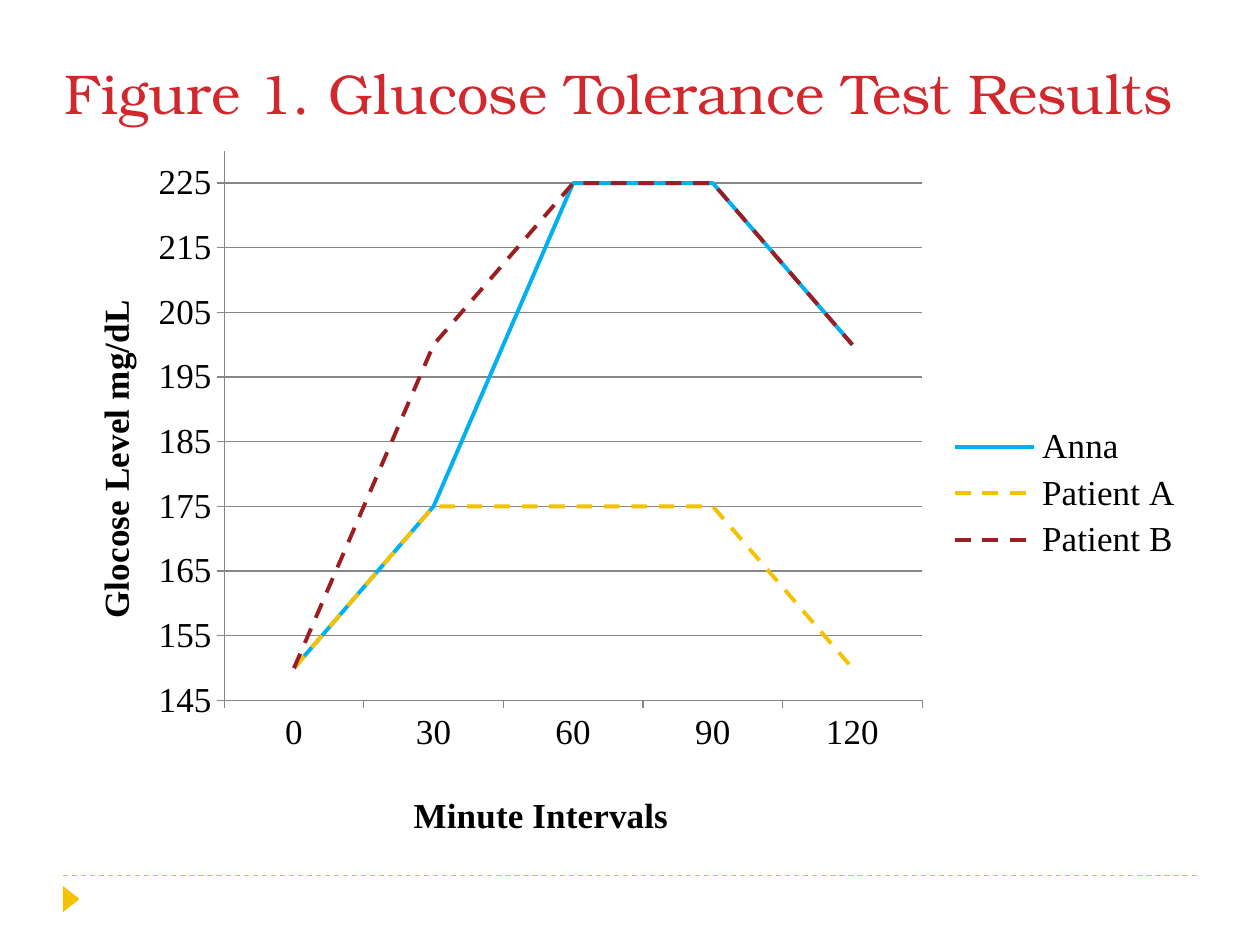
from lxml.etree import SubElement
from pptx import Presentation
from pptx.chart.data import CategoryChartData
from pptx.dml.color import RGBColor
from pptx.enum.chart import XL_CHART_TYPE, XL_LEGEND_POSITION, XL_TICK_MARK
from pptx.enum.dml import MSO_LINE
from pptx.enum.shapes import MSO_CONNECTOR, MSO_SHAPE
from pptx.enum.text import MSO_ANCHOR
from pptx.oxml import parse_xml
from pptx.oxml.ns import nsdecls, qn
from pptx.util import Pt

THEME = {
    "red": RGBColor(0xD1, 0x28, 0x2E),
    "gold": RGBColor(0xF5, 0xC2, 0x01),
    "blue": RGBColor(0x00, 0xB0, 0xF0),
    "maroon": RGBColor(0x9D, 0x1E, 0x22),
    "black": RGBColor(0, 0, 0),
    "grey": RGBColor(0x86, 0x86, 0x86),
    "title_font": "TeX Gyre Bonum",
    "chart_font": "Times New Roman",
    "title_size": Pt(32),
    "chart_size": Pt(20),
}

TITLE = "Figure 1. Glucose Tolerance Test Results"
MINUTES = ["0", "30", "60", "90", "120"]
SERIES = [  # name, glucose levels, colour, dash
    ("Anna", (150, 175, 225, 225, 200), "blue", MSO_LINE.SOLID),
    ("Patient A", (150, 175, 175, 175, 150), "gold", MSO_LINE.DASH),
    ("Patient B", (150, 200, 225, 225, 200), "maroon", MSO_LINE.DASH),
]
X_TITLE, Y_TITLE = "Minute Intervals", "Glocose Level mg/dL"
# Fractions of the chart area
PLOT_BOX = {"x": 0.15, "y": 0.02, "w": 0.61, "h": 0.77}
X_TITLE_SPOT = {"x": 0.31, "y": 0.91}
Y_TITLE_SPOT = {"x": 0.03, "y": 0.22}


def make_layout(box, inner=False):
    """Return a manual chart layout holding the given fractions."""
    layout = parse_xml(f"<c:layout {nsdecls('c')}><c:manualLayout/></c:layout>")
    values = {"layoutTarget": "inner"} if inner else {}
    values.update({"xMode": "edge", "yMode": "edge"}, **box)
    for tag, value in values.items():
        SubElement(layout[0], qn(f"c:{tag}")).set("val", str(value))
    return layout


def style_axis(axis, title, spot):
    axis.major_tick_mark = XL_TICK_MARK.OUTSIDE
    axis.minor_tick_mark = XL_TICK_MARK.NONE
    axis.format.line.color.rgb = THEME["grey"]
    axis.format.line.width = Pt(0.75)
    tf = axis.axis_title.text_frame
    tf.text = title
    font = tf.paragraphs[0].font
    font.name, font.size, font.bold = THEME["chart_font"], THEME["chart_size"], True
    font.color.rgb = THEME["black"]
    el = axis.axis_title._element
    for old in el.findall(qn("c:layout")):
        el.remove(old)
    el.find(qn("c:tx")).addnext(make_layout(spot))


def add_chart(slide):
    data = CategoryChartData()
    data.categories = MINUTES
    for name, levels, *_ in SERIES:
        data.add_series(name, levels)
    chart = slide.shapes.add_chart(
        XL_CHART_TYPE.LINE, Pt(30), Pt(78), Pt(654), Pt(408), data).chart
    chart.has_title = False
    chart.font.name, chart.font.size = THEME["chart_font"], THEME["chart_size"]
    chart.font.color.rgb = THEME["black"]
    chart.has_legend = True
    chart.legend.position = XL_LEGEND_POSITION.RIGHT
    chart.legend.include_in_layout = False

    plot = chart.plots[0]
    plot.vary_by_categories = False
    for series, (_, _, color, dash) in zip(plot.series, SERIES):
        series.smooth = False
        line = series.format.line
        line.color.rgb, line.width, line.dash_style = THEME[color], Pt(2.25), dash

    style_axis(chart.category_axis, X_TITLE, X_TITLE_SPOT)
    axis = chart.value_axis
    style_axis(axis, Y_TITLE, Y_TITLE_SPOT)
    body = axis.axis_title.text_frame._txBody.bodyPr
    body.set("rot", "-5400000")
    body.set("vert", "horz")
    axis.minimum_scale, axis.maximum_scale, axis.major_unit = 145, 230, 10
    axis.has_major_gridlines = True
    grid = axis.major_gridlines.format.line
    grid.color.rgb, grid.width = THEME["grey"], Pt(0.75)

    area = chart._chartSpace.chart.plotArea
    for old in area.findall(qn("c:layout")):
        area.remove(old)
    area.insert(0, make_layout(PLOT_BOX, inner=True))


def add_footer(slide):
    rule = slide.shapes.add_connector(
        MSO_CONNECTOR.STRAIGHT, Pt(36), Pt(500.4), Pt(684), Pt(500.4))
    rule.line.color.rgb, rule.line.width = THEME["gold"], Pt(0.75)
    rule.line.dash_style = MSO_LINE.DASH
    SubElement(rule._element.spPr, qn("a:effectLst"))
    marker = slide.shapes.add_shape(
        MSO_SHAPE.ISOSCELES_TRIANGLE, Pt(33.2), Pt(509), Pt(15), Pt(9.5))
    marker.rotation = 90
    marker.shadow.inherit = False
    marker.fill.solid()
    marker.fill.fore_color.rgb = THEME["gold"]
    marker.line.fill.background()


def add_title(slide):
    tf = slide.shapes.add_textbox(Pt(30), Pt(30), Pt(672), Pt(78)).text_frame
    tf.word_wrap = True
    tf.vertical_anchor = MSO_ANCHOR.TOP
    p = tf.paragraphs[0]
    p.text = TITLE
    p.font.name, p.font.size = THEME["title_font"], THEME["title_size"]
    p.font.color.rgb = THEME["red"]


def main():
    prs = Presentation()
    prs.slide_width, prs.slide_height = Pt(720), Pt(540)
    slide = prs.slides.add_slide(prs.slide_layouts[6])
    add_footer(slide)
    add_chart(slide)
    add_title(slide)
    prs.save("out.pptx")


if __name__ == "__main__":
    main()
